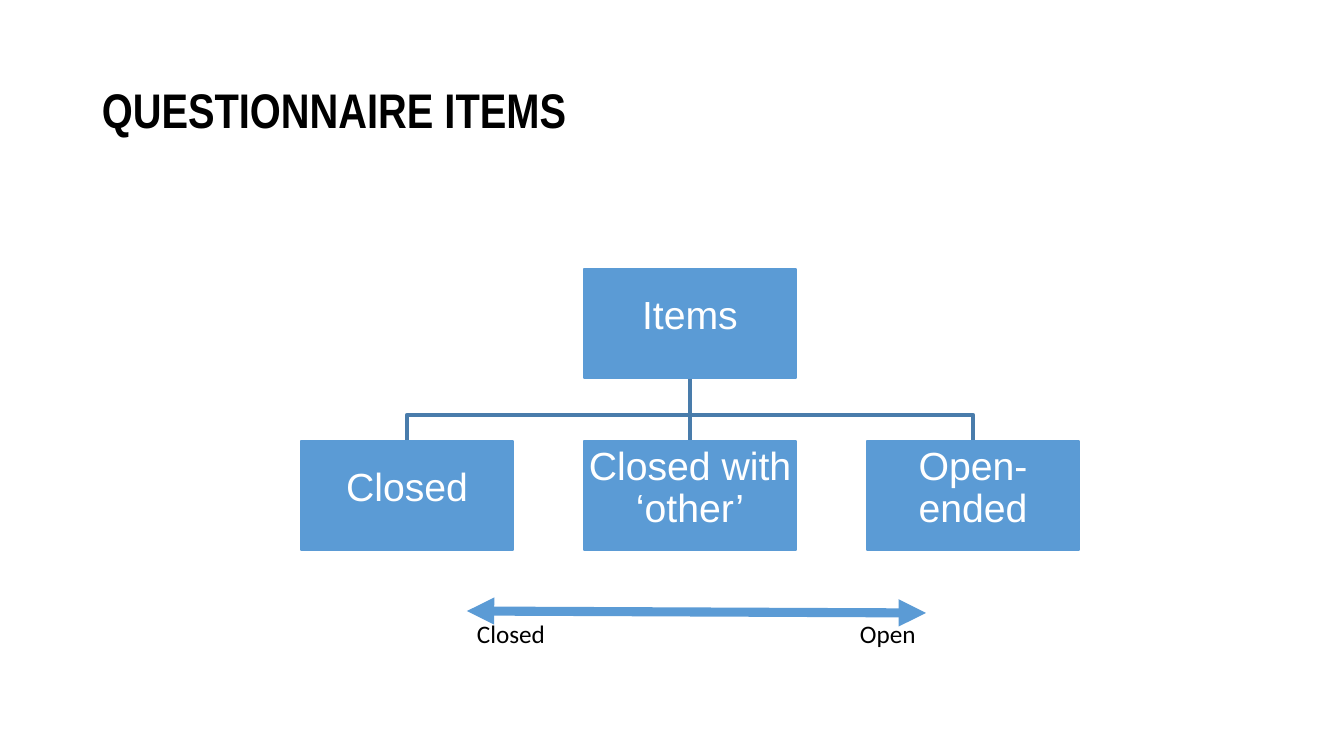
import dataclasses

import pptx
import pptx.dml.color
import pptx.enum.shapes
import pptx.enum.text
import pptx.oxml
import pptx.oxml.ns
import pptx.util

PX = 914400 / 100.8


def px(n):
    return pptx.util.Emu(round(n * PX))


@dataclasses.dataclass(frozen=True)
class Theme:
    black: str = "000000"
    white: str = "FFFFFF"
    blue: str = "5B9BD5"
    branch: str = "497CAB"
    title_font: str = "Arial Narrow"
    box_font: str = "Arial"
    label_font: str = "Calibri"
    title_size: float = 34.7
    box_size: int = 28
    label_size: int = 18


class Deck:
    def __init__(self, theme):
        self.theme = theme
        self.prs = pptx.Presentation()
        self.prs.slide_width, self.prs.slide_height = px(1344), px(756)
        self.slide = self.prs.slides.add_slide(self.prs.slide_layouts[6])

    def color(self, value):
        return pptx.dml.color.RGBColor.from_string(value)

    def set_text(self, sp, text, font, size, color, bold=False, spacing=None):
        tf = sp.text_frame
        tf.text = text
        p = tf.paragraphs[0]
        p.line_spacing = spacing
        r = p.runs[0]
        r.font.name = font
        r.font.size = pptx.util.Pt(size)
        r.font.bold = bold
        r.font.color.rgb = self.color(color)
        return tf

    def stroke(self, sp, color, width):
        sp.line.color.rgb = self.color(color)
        sp.line.width = pptx.util.Pt(width)

    def title(self, text, x, y, w, h):
        t = self.theme
        sp = self.slide.shapes.add_textbox(px(x), px(y), px(w), px(h))
        tf = self.set_text(sp, text, t.title_font, t.title_size, t.black, True, 0.9)
        tf.word_wrap = True
        tf.vertical_anchor = pptx.enum.text.MSO_ANCHOR.MIDDLE

    def box(self, text, x, y, w, h):
        t = self.theme
        sp = self.slide.shapes.add_shape(
            pptx.enum.shapes.MSO_SHAPE.RECTANGLE, px(x), px(y), px(w), px(h))
        sp.shadow.inherit = False
        sp.fill.solid()
        sp.fill.fore_color.rgb = self.color(t.blue)
        self.stroke(sp, t.blue, 1)
        tf = self.set_text(sp, text, t.box_font, t.box_size, t.white, spacing=0.9)
        tf.word_wrap = True
        tf.vertical_anchor = pptx.enum.text.MSO_ANCHOR.MIDDLE
        tf.margin_left = tf.margin_top = tf.margin_right = px(2)
        tf.margin_bottom = px(15)
        tf.paragraphs[0].alignment = pptx.enum.text.PP_ALIGN.CENTER
        return sp

    def label(self, text, x, y, w, h):
        t = self.theme
        sp = self.slide.shapes.add_textbox(px(x), px(y), px(w), px(h))
        tf = self.set_text(sp, text, t.label_font, t.label_size, t.black)
        tf.word_wrap = False
        tf.auto_size = pptx.enum.text.MSO_AUTO_SIZE.SHAPE_TO_FIT_TEXT

    def elbow(self, x1, y1, x2, y2, bend):
        fb = self.slide.shapes.build_freeform(x1, y1, scale=PX)
        fb.add_line_segments([(x1, bend), (x2, bend), (x2, y2)], close=False)
        sp = fb.convert_to_shape()
        sp.shadow.inherit = False
        sp.fill.background()
        self.stroke(sp, self.theme.branch, 3)

    def line(self, x1, y1, x2, y2, color, width):
        s = self.slide.shapes.add_connector(
            pptx.enum.shapes.MSO_CONNECTOR.STRAIGHT, px(x1), px(y1), px(x2), px(y2))
        self.stroke(s, color, width)
        s._element.spPr.append(pptx.oxml.parse_xml(
            f'<a:effectLst {pptx.oxml.ns.nsdecls("a")}/>'))
        return s

    def double_arrow(self, x1, y1, x2, y2):
        s = self.line(x1, y1, x2, y2, self.theme.blue, 6.5)
        ln = s._element.spPr.find(pptx.oxml.ns.qn("a:ln"))
        for end in ("headEnd", "tailEnd"):
            ln.append(pptx.oxml.parse_xml(
                f'<a:{end} {pptx.oxml.ns.nsdecls("a")} type="triangle"/>'))


def main():
    deck = Deck(Theme())
    deck.title("QUESTIONNAIRE ITEMS", 92, 40, 1159, 146)

    w, h, pitch, left = 212, 109, 283, 301
    root_y, child_y, bend = 269, 441, 415
    kinds = ["Closed", "Closed with ‘other’", "Open-ended"]
    xs = [left + i * pitch for i in range(len(kinds))]
    root_x = xs[1]
    middle = root_x + w // 2
    root_bottom = root_y + h

    for x in (xs[0], xs[2]):
        deck.elbow(middle, root_bottom, x + w // 2, child_y, bend)
    trunk = deck.line(middle, root_bottom, middle, child_y, deck.theme.branch, 3)

    root = deck.box("Items", root_x, root_y, w, h)
    children = [deck.box(kind, x, child_y, w, h) for kind, x in zip(kinds, xs)]
    trunk.begin_connect(root, 2)
    trunk.end_connect(children[1], 0)

    deck.double_arrow(467, 611, 926, 613)
    deck.label("Closed", 467, 613, 90, 40)
    deck.label("Open", 850, 613, 76, 40)
    deck.prs.save("out.pptx")


if __name__ == "__main__":
    main()
